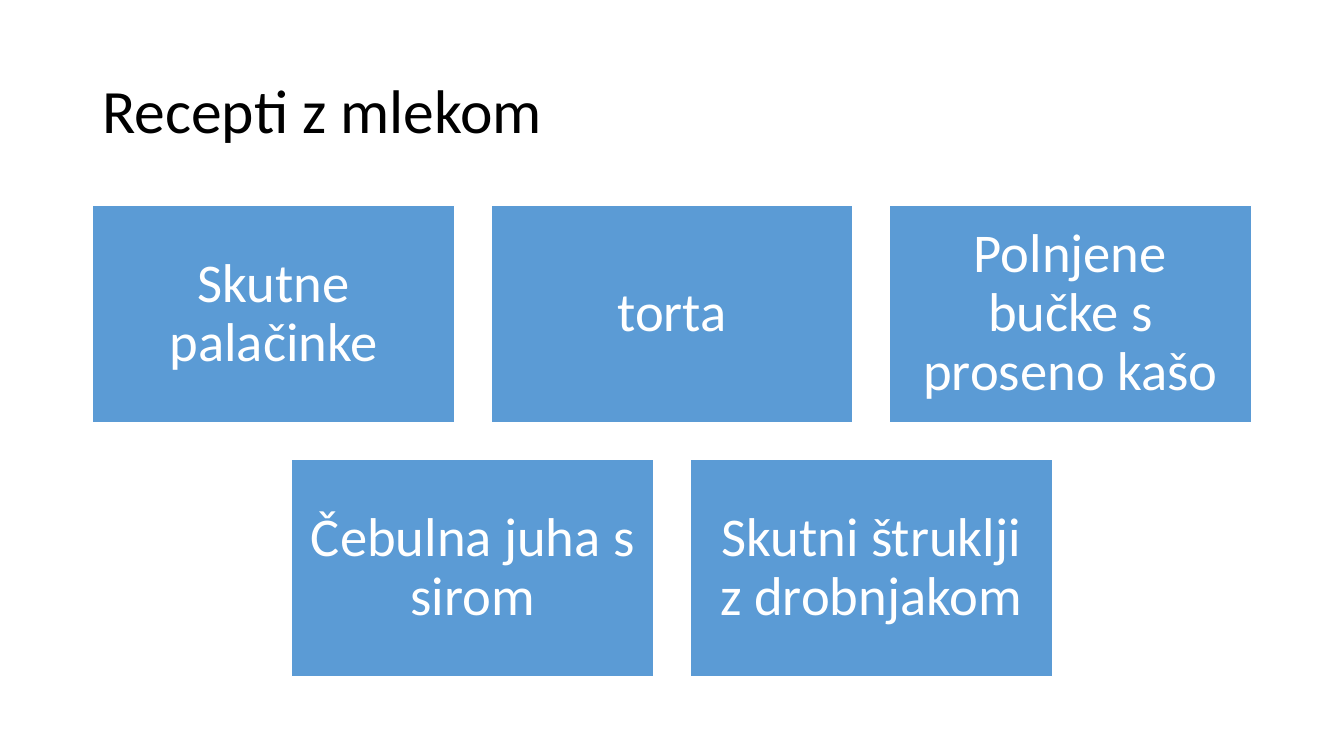
from dataclasses import dataclass

from pptx import Presentation
from pptx.dml.color import RGBColor
from pptx.enum.shapes import MSO_SHAPE
from pptx.enum.text import MSO_ANCHOR, MSO_AUTO_SIZE, PP_ALIGN
from pptx.util import Cm, Pt

RECTANGLE = MSO_SHAPE.RECTANGLE
MIDDLE = MSO_ANCHOR.MIDDLE
NO_AUTOFIT = MSO_AUTO_SIZE.NONE
LEFT, CENTER = PP_ALIGN.LEFT, PP_ALIGN.CENTER


@dataclass(frozen=True)
class Theme:
    font: str = "Calibri"
    title_size: int = 44
    card_size: int = 39
    dark: RGBColor = RGBColor(0x00, 0x00, 0x00)
    light: RGBColor = RGBColor(0xFF, 0xFF, 0xFF)
    accent: RGBColor = RGBColor(0x5B, 0x9B, 0xD5)


theme = Theme()


def write(tf, text, size, color, align, inset_x, inset_y):
    tf.word_wrap = True
    tf.auto_size = NO_AUTOFIT
    tf.vertical_anchor = MIDDLE
    tf.margin_left = tf.margin_right = Cm(inset_x)
    tf.margin_top = tf.margin_bottom = Cm(inset_y)
    p = tf.paragraphs[0]
    p.alignment = align
    p.line_spacing = 0.9
    r = p.add_run()
    r.text = text
    r.font.name = theme.font
    r.font.size = Pt(size)
    r.font.color.rgb = color


SLIDE_W, SLIDE_H = 33.87, 19.05
CARD_W, CARD_H, GAP = 9.13, 5.48, 0.91
CARDS_TOP = 5.18
RECIPES = [
    ["Skutne palačinke", "torta", "Polnjene bučke s proseno kašo"],
    ["Čebulna juha s sirom", "Skutni štruklji z drobnjakom"],
]

prs = Presentation()
prs.slide_width, prs.slide_height = Cm(SLIDE_W), Cm(SLIDE_H)
s = prs.slides.add_slide(prs.slide_layouts[5])

title = s.shapes.title
title.left, title.top = Cm(2.33), Cm(1.01)
title.width, title.height = Cm(29.21), Cm(3.68)
write(title.text_frame, "Recepti z mlekom", theme.title_size, theme.dark, LEFT,
      inset_x=0.25, inset_y=0.13)

for row, recipes in enumerate(RECIPES):
    row_w = len(recipes) * (CARD_W + GAP) - GAP
    row_left = (SLIDE_W - row_w) / 2
    top = CARDS_TOP + row * (CARD_H + GAP)
    for col, recipe in enumerate(recipes):
        left = row_left + col * (CARD_W + GAP)
        sp = s.shapes.add_shape(RECTANGLE, Cm(left), Cm(top), Cm(CARD_W), Cm(CARD_H))
        sp.shadow.inherit = False
        sp.fill.solid()
        sp.fill.fore_color.rgb = theme.accent
        sp.line.color.rgb = theme.light
        sp.line.width = Pt(1)
        write(sp.text_frame, recipe, theme.card_size, theme.light, CENTER,
              inset_x=0.41, inset_y=0.41)

prs.save("out.pptx")
